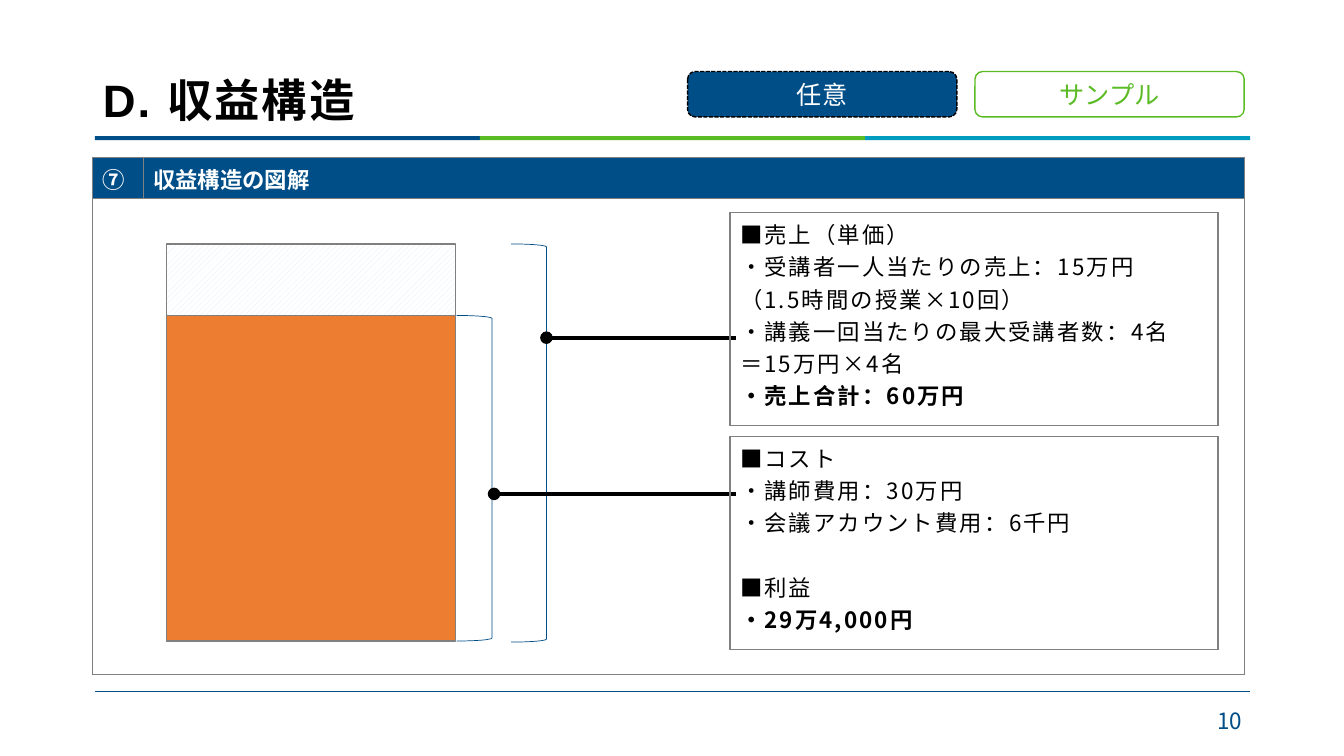
from lxml import etree
from pptx import Presentation
from pptx.dml.color import RGBColor
from pptx.enum import dml, shapes, text
from pptx.oxml import ns
from pptx.util import Inches, Pt

NAVY = RGBColor(0x00, 0x4E, 0x87)
GREEN = RGBColor(0x5B, 0xBB, 0x24)
CYAN = RGBColor(0x00, 0x9B, 0xBF)
ORANGE = RGBColor(0xED, 0x7D, 0x31)
PALE_BLUE = RGBColor(0xDE, 0xEB, 0xF7)
GRAY = RGBColor(0x80, 0x80, 0x80)
BLACK = RGBColor(0, 0, 0)
WHITE = RGBColor(0xFF, 0xFF, 0xFF)
FONT = "Noto Sans CJK JP"
SHAPE = shapes.MSO_SHAPE

SALES = ["■売上（単価）", "・受講者一人当たりの売上：15万円", "（1.5時間の授業×10回）",
         "・講義一回当たりの最大受講者数：4名", "＝15万円×4名", "・売上合計：60万円"]
COSTS = ["■コスト", "・講師費用：30万円", "・会議アカウント費用：6千円",
         "■利益", "・29万4,000円"]


def format_runs(p, size, color, bold=False, latin=FONT, spacing=0):
    for r in p.runs:
        r.font.size, r.font.bold, r.font.name = Pt(size), bold, latin
        r.font.color.rgb = color
        rpr = r.font._element
        etree.SubElement(rpr, ns.qn("a:ea"), typeface=FONT)
        if spacing:
            rpr.set("spc", str(int(spacing * 100)))


def add_box(slide, kind, box, fill=None, line=None, width=1):
    sp = slide.shapes.add_shape(kind, *map(Inches, box))
    sp.shadow.inherit = False
    if fill is None:
        sp.fill.background()
    else:
        sp.fill.solid()
        sp.fill.fore_color.rgb = fill
    if line is None:
        sp.line.fill.background()
    else:
        sp.line.color.rgb = line
        sp.line.width = Pt(width)
    return sp


def add_tag(slide, left, label, fill, line, color):
    sp = add_box(slide, SHAPE.ROUNDED_RECTANGLE, (left, 0.71, 2.67, 0.45), fill, line)
    tf = sp.text_frame
    tf.vertical_anchor = text.MSO_ANCHOR.MIDDLE
    tf.text = label
    tf.paragraphs[0].alignment = text.PP_ALIGN.CENTER
    format_runs(tf.paragraphs[0], 18, color)
    return sp


def add_line(slide, x1, x2, y, color, width, oval=False):
    cx = slide.shapes.add_connector(
        shapes.MSO_CONNECTOR.STRAIGHT, Inches(x1), Inches(y), Inches(x2), Inches(y))
    cx.line.color.rgb = color
    cx.line.width = Pt(width)
    if oval:
        etree.SubElement(cx.line._get_or_add_ln(), ns.qn("a:headEnd"), type="oval")
    etree.SubElement(cx._element.spPr, ns.qn("a:effectLst"))


def style_cell(cell, fill=None):
    if fill is None:
        cell.fill.background()
    else:
        cell.fill.solid()
        cell.fill.fore_color.rgb = fill
    tc_pr = cell._tc.get_or_add_tcPr()
    for i, side in enumerate(("lnL", "lnR", "lnT", "lnB")):
        ln = etree.Element(ns.qn(f"a:{side}"), w=str(Pt(1)))
        solid = etree.SubElement(ln, ns.qn("a:solidFill"))
        etree.SubElement(solid, ns.qn("a:srgbClr"), val=str(GRAY))
        tc_pr.insert(i, ln)


def add_grid(slide, left, top, widths, heights):
    table = slide.shapes.add_table(
        len(heights), len(widths), Inches(left), Inches(top),
        Inches(sum(widths)), Inches(sum(heights))).table
    table.first_row = table.horz_banding = False
    for col, width in zip(table.columns, widths):
        col.width = Inches(width)
    for row, height in zip(table.rows, heights):
        row.height = Inches(height)
    return table


def add_frame(slide):
    """Outer frame with its numbered heading row."""
    table = add_grid(slide, 0.92, 1.56, (0.5, 10.92), (0.41, 4.72))
    for cell, label in zip(table.rows[0].cells, ("⑦", "収益構造の図解")):
        style_cell(cell, NAVY)
        cell.text = label
        format_runs(cell.text_frame.paragraphs[0], 16, WHITE, bold=True)
    for cell in table.rows[1].cells:
        style_cell(cell)
    table.cell(1, 0).merge(table.cell(1, 1))


def add_note(slide, top, lines):
    """Bordered note: the last line is bold, a later ■ heading has a gap above."""
    cell = add_grid(slide, 7.24, top, (4.84,), (2.11,)).cell(0, 0)
    style_cell(cell)
    cell.text = "\n".join(lines)
    for i, p in enumerate(cell.text_frame.paragraphs):
        if i and lines[i].startswith("■"):
            p.space_before = Pt(23)
        format_runs(p, 16, BLACK, bold=i == len(lines) - 1, spacing=1.5)


def add_title(slide):
    title = slide.shapes.title
    title.left, title.top, title.width, title.height = map(Inches, (0.92, 0.4, 11.5, 0.91))
    tf = title.text_frame
    tf.text = "D. 収益構造"
    tf.vertical_anchor = text.MSO_ANCHOR.MIDDLE
    p = tf.paragraphs[0]
    p.alignment = text.PP_ALIGN.LEFT
    p.line_spacing = 1.5
    format_runs(p, 32.4, BLACK, bold=True, latin="Arial", spacing=1.5)


def add_page_number(slide):
    tf = slide.shapes.add_textbox(*map(Inches, (9.42, 6.95, 3, 0.4))).text_frame
    tf.word_wrap = True
    tf.vertical_anchor = text.MSO_ANCHOR.MIDDLE
    tf.text = "10"
    tf.paragraphs[0].alignment = text.PP_ALIGN.RIGHT
    format_runs(tf.paragraphs[0], 16, NAVY)


def add_revenue_bar(slide):
    add_box(slide, SHAPE.RECTANGLE, (1.65, 3.13, 2.87, 3.23), ORANGE, GRAY)
    profit = add_box(slide, SHAPE.RECTANGLE, (1.65, 2.42, 2.87, 0.71), WHITE, GRAY)
    profit.fill.patterned()
    profit.fill.pattern = dml.MSO_PATTERN.WIDE_UPWARD_DIAGONAL
    profit.fill.fore_color.rgb = PALE_BLUE
    profit.fill.back_color.rgb = WHITE


def main():
    prs = Presentation()
    prs.slide_width, prs.slide_height = Inches(13.33), Inches(7.5)
    slide = prs.slides.add_slide(prs.slide_layouts[5])

    for i, color in enumerate((NAVY, GREEN, CYAN)):
        add_box(slide, SHAPE.RECTANGLE, (0.94 + i * 3.82, 1.35, 3.82, 0.04), color)
    add_line(slide, 0.94, 12.4, 6.86, NAVY, 0.5)
    add_title(slide)
    add_page_number(slide)
    add_frame(slide)

    add_tag(slide, 9.67, "サンプル", WHITE, GREEN, GREEN)
    optional = add_tag(slide, 6.82, "任意", NAVY, BLACK, WHITE)
    optional.line.dash_style = dml.MSO_LINE.SQUARE_DOT

    add_revenue_bar(slide)
    for left, top, height, line_x, line_y, note_top, lines in (
            (5.07, 2.42, 3.95, 5.42, 3.35, 2.11, SALES),
            (4.53, 3.13, 3.23, 4.9, 4.9, 4.33, COSTS)):
        add_box(slide, SHAPE.RIGHT_BRACKET, (left, top, 0.35, height), line=NAVY, width=0.5)
        add_line(slide, line_x, 7.3, line_y, BLACK, 3, oval=True)
        add_note(slide, note_top, lines)
    prs.save("out.pptx")


if __name__ == "__main__":
    main()
